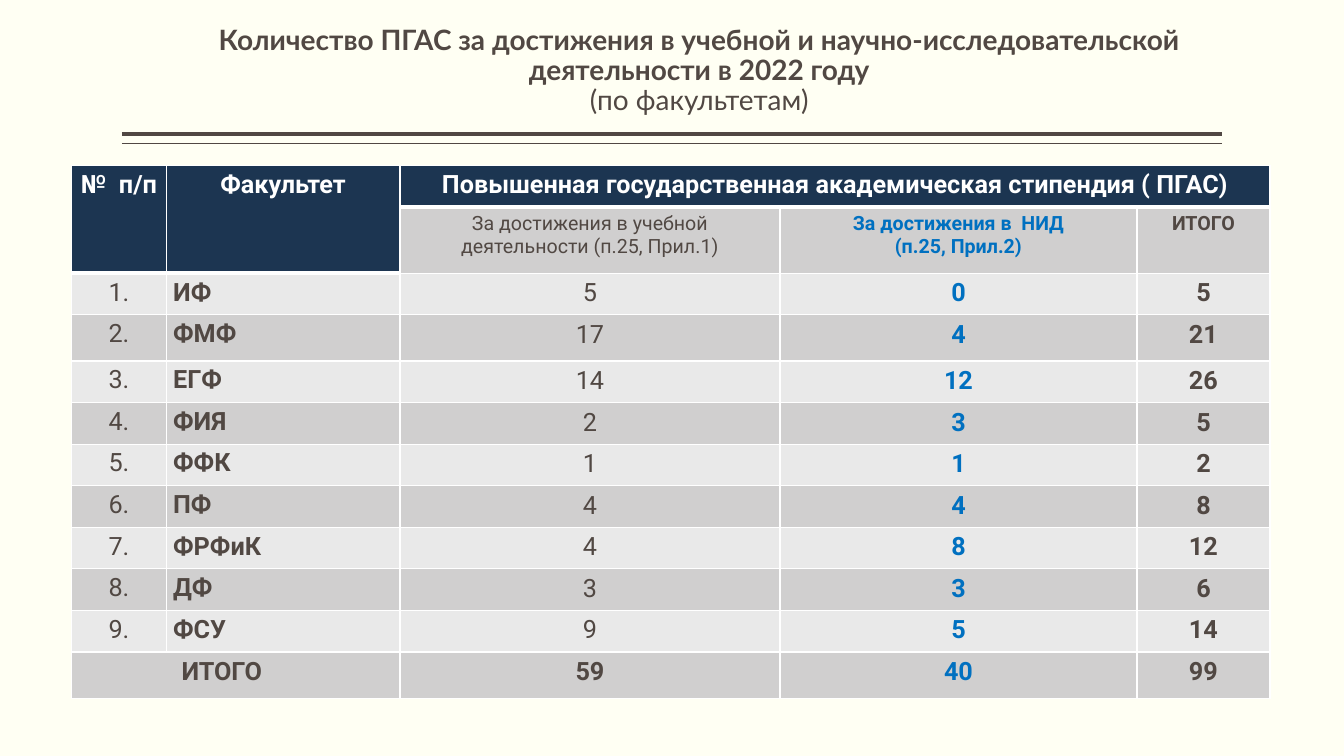
from dataclasses import dataclass

from lxml.etree import SubElement
from pptx import Presentation
from pptx.dml.color import RGBColor as RGB
from pptx.enum.shapes import MSO_CONNECTOR as CONN
from pptx.enum.text import MSO_ANCHOR as ANCHOR, PP_ALIGN as ALIGN
from pptx.oxml.ns import qn
from pptx.util import Pt


@dataclass(frozen=True)
class Theme:
    paper: str = "FFFFF3"
    ink: str = "514843"
    white: str = "FFFFFF"
    navy: str = "1C3551"
    blue: str = "0070C0"
    dark_band: str = "D0CFCF"
    light_band: str = "E9E9E9"
    title_font: str = "Lato"
    table_font: str = "Roboto"
    title_size: int = 20
    body_size: int = 18
    small_size: int = 14


T = Theme()

TITLE = ("Количество ПГАС за достижения в учебной и научно-исследовательской "
         "деятельности в 2022 году")
SUBTITLE = "(по факультетам)"
STIPEND = "Повышенная государственная академическая стипендия ( ПГАС)"
SUBHEADS = ["За достижения в учебной деятельности (п.25, Прил.1)",
            "За достижения в  НИД\n(п.25, Прил.2)", "ИТОГО"]
# faculty, study awards, research awards, total
FACULTIES = [("ИФ", 5, 0, 5), ("ФМФ", 17, 4, 21), ("ЕГФ", 14, 12, 26),
             ("ФИЯ", 2, 3, 5), ("ФФК", 1, 1, 2), ("ПФ", 4, 4, 8),
             ("ФРФиК", 4, 8, 12), ("ДФ", 3, 3, 6), ("ФСУ", 9, 5, 14)]
TOTALS = (59, 40, 99)

COL_WIDTHS = [67.5, 167, 271.5, 255, 95]
ROW_HEIGHTS = [29.5, 47.5, 29.7, 33] + [29.7] * 7 + [33.5]
VALUE_COLORS = [T.ink, T.blue, T.ink]


def write(tf, text, size=T.body_size, font=T.table_font, color=T.ink,
          bold=False, align=ALIGN.CENTER, spacing=None, more=False):
    """Write each line of text as a paragraph; more adds to what is there."""
    for i, line in enumerate(text.split("\n")):
        p = tf.add_paragraph() if more or i else tf.paragraphs[0]
        p.alignment = align
        if spacing:
            p.line_spacing = spacing
        r = p.add_run()
        r.text = line
        r.font.size, r.font.name, r.font.bold = Pt(size), font, bold
        r.font.color.rgb = RGB.from_string(color)


def style_cell(cell, fill, bottom=1):
    """White borders, then the fill."""
    tc_pr = cell._tc.get_or_add_tcPr()
    for side, width in zip("LRTB", (1, 1, 1, bottom)):
        ln = SubElement(tc_pr, qn(f"a:ln{side}"), w=str(Pt(width)))
        SubElement(SubElement(ln, qn("a:solidFill")), qn("a:srgbClr"), val=T.white)
    cell.fill.solid()
    cell.fill.fore_color.rgb = RGB.from_string(fill)


def write_label(cell, text, **fmt):
    """Text of the two left columns: tight margins, open line spacing."""
    cell.margin_left = cell.margin_right = Pt(5)
    cell.margin_top = cell.margin_bottom = 0
    write(cell.text_frame, text, spacing=1.15, **fmt)


def add_title(slide, x, y, w, h):
    tf = slide.shapes.add_textbox(Pt(x), Pt(y), Pt(w), Pt(h)).text_frame
    tf.word_wrap = True
    tf.vertical_anchor = ANCHOR.MIDDLE
    fmt = dict(size=T.title_size, font=T.title_font, spacing=0.9)
    write(tf, TITLE, bold=True, **fmt)
    write(tf, SUBTITLE, more=True, **fmt)


def add_double_rule(slide, x, y, w, gap):
    for top, weight in ((y, 3), (y + gap, 1)):
        line = slide.shapes.add_connector(
            CONN.STRAIGHT, Pt(x), Pt(top), Pt(x + w), Pt(top))
        line.line.color.rgb = RGB.from_string(T.ink)
        line.line.width = Pt(weight)
        SubElement(line._element.spPr, qn("a:effectLst"))


def add_header(table):
    for col in range(5):
        style_cell(table.cell(0, col), T.navy, bottom=3)
        style_cell(table.cell(1, col), T.navy if col < 2 else T.dark_band,
                   bottom=3 if col < 2 else 1)
    for col, text in enumerate(["№  п/п", "Факультет"]):
        table.cell(0, col).merge(table.cell(1, col))
        write_label(table.cell(0, col), text, color=T.white, bold=True)
    table.cell(0, 2).merge(table.cell(0, 4))
    write(table.cell(0, 2).text_frame, STIPEND, color=T.white, bold=True)
    for i, text in enumerate(SUBHEADS):
        write(table.cell(1, i + 2).text_frame, text, size=T.small_size,
              color=VALUE_COLORS[i], bold=i > 0)


def add_values(table, row, values, bold_first=False):
    for i, value in enumerate(values):
        write(table.cell(row, i + 2).text_frame, str(value),
              color=VALUE_COLORS[i], bold=bold_first or i > 0)


def add_award_table(slide, x, y):
    frame = slide.shapes.add_table(
        len(ROW_HEIGHTS), len(COL_WIDTHS), Pt(x), Pt(y),
        Pt(sum(COL_WIDTHS)), Pt(sum(ROW_HEIGHTS)))
    table = frame.table
    table.first_row = table.horz_banding = False
    for col, width in zip(table.columns, COL_WIDTHS):
        col.width = Pt(width)
    for row, height in zip(table.rows, ROW_HEIGHTS):
        row.height = Pt(height)
    add_header(table)

    # Faculty rows and the closing total share the alternating bands
    last = len(ROW_HEIGHTS) - 1
    for row in range(2, last + 1):
        for col in range(5):
            style_cell(table.cell(row, col), T.dark_band if row % 2 else T.light_band)
    for n, (faculty, *values) in enumerate(FACULTIES, 1):
        write_label(table.cell(n + 1, 0), f"{n}.")
        write_label(table.cell(n + 1, 1), faculty, bold=True, align=ALIGN.LEFT)
        add_values(table, n + 1, values)

    total = table.cell(last, 0)
    total.merge(table.cell(last, 1))
    total.margin_left = Pt(78.5)
    write(total.text_frame, "ИТОГО", bold=True, align=ALIGN.LEFT)
    add_values(table, last, TOTALS, bold_first=True)


def main():
    prs = Presentation()
    prs.slide_width, prs.slide_height = Pt(960), Pt(540)
    slide = prs.slides.add_slide(prs.slide_layouts[6])
    bg = slide.background.fill
    bg.solid()
    bg.fore_color.rgb = RGB.from_string(T.paper)
    add_double_rule(slide, x=87, y=95.6, w=786, gap=7)
    add_title(slide, x=98, y=22.3, w=803, h=57)
    add_award_table(slide, x=51.2, y=118.3)
    prs.save("out.pptx")


if __name__ == "__main__":
    main()
